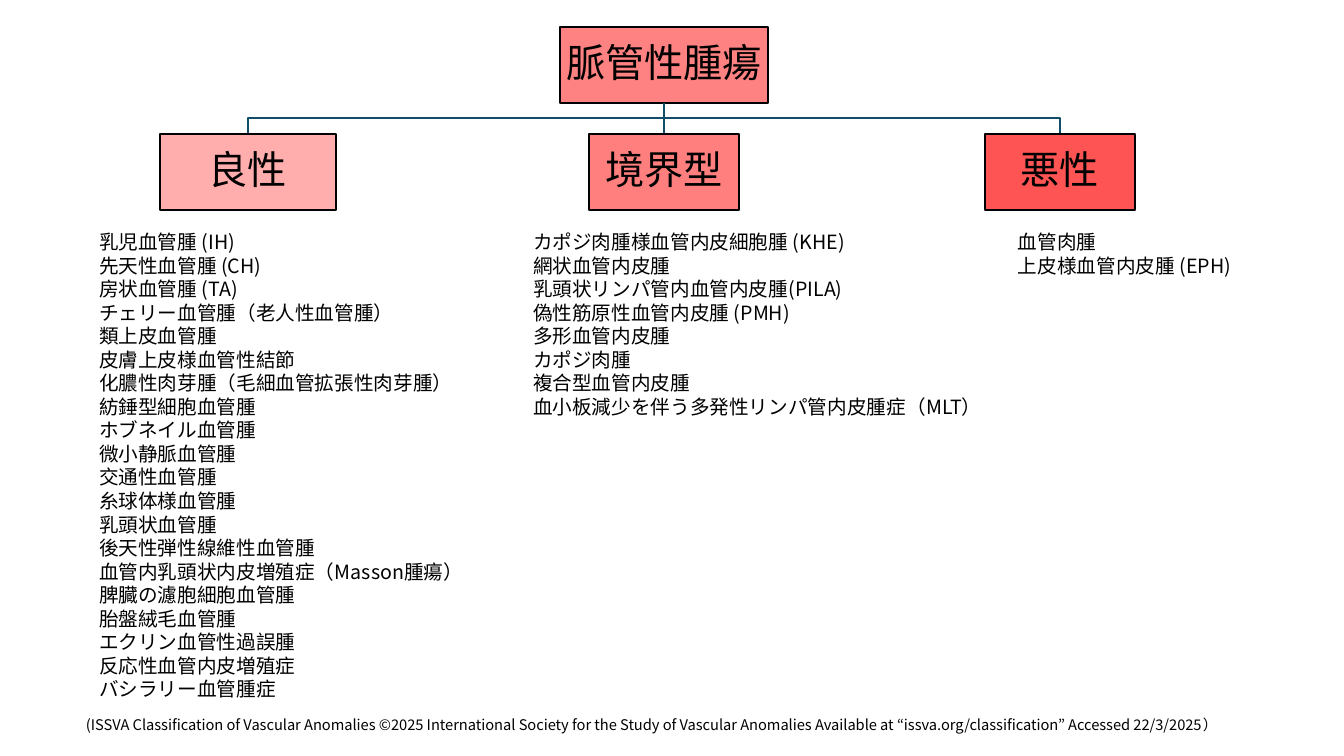
from dataclasses import dataclass
from lxml import etree
from pptx import Presentation
from pptx.dml.color import RGBColor
from pptx.enum.shapes import MSO_CONNECTOR, MSO_SHAPE
from pptx.enum.text import MSO_ANCHOR, MSO_AUTO_SIZE, PP_ALIGN
from pptx.oxml.ns import qn
from pptx.util import Pt

STRAIGHT = MSO_CONNECTOR.STRAIGHT
RECTANGLE = MSO_SHAPE.RECTANGLE
TOP, MIDDLE = MSO_ANCHOR.TOP, MSO_ANCHOR.MIDDLE
LEFT, CENTER = PP_ALIGN.LEFT, PP_ALIGN.CENTER
NO_FIT = MSO_AUTO_SIZE.NONE

ROOT = {"label": "脈管性腫瘍", "left": 560, "width": 208, "opacity": 49}
BRANCHES = [
    {"label": "良性", "left": 160, "width": 176, "opacity": 32,
     "list_left": 89, "list_width": 576, "slot": 1,
     "tumours": [
         "乳児血管腫 (IH)",
         "先天性血管腫 (CH)",
         "房状血管腫 (TA)",
         "チェリー血管腫（老人性血管腫）",
         "類上皮血管腫",
         "皮膚上皮様血管性結節",
         "化膿性肉芽腫（毛細血管拡張性肉芽腫）",
         "紡錘型細胞血管腫",
         "ホブネイル血管腫",
         "微小静脈血管腫",
         "交通性血管腫",
         "糸球体様血管腫",
         "乳頭状血管腫",
         "後天性弾性線維性血管腫",
         "血管内乳頭状内皮増殖症（Masson腫瘍）",
         "脾臓の濾胞細胞血管腫",
         "胎盤絨毛血管腫",
         "エクリン血管性過誤腫",
         "反応性血管内皮増殖症",
         "バシラリー血管腫症",
     ]},
    {"label": "境界型", "left": 589, "width": 150, "opacity": 50,
     "list_left": 523, "list_width": 485, "slot": 2,
     "tumours": [
         "カポジ肉腫様血管内皮細胞腫 (KHE)",
         "網状血管内皮腫",
         "乳頭状リンパ管内血管内皮腫(PILA)",
         "偽性筋原性血管内皮腫 (PMH)",
         "多形血管内皮腫",
         "カポジ肉腫",
         "複合型血管内皮腫",
         "血小板減少を伴う多発性リンパ管内皮腫症（MLT）",
     ]},
    {"label": "悪性", "left": 985, "width": 150, "opacity": 67,
     "list_left": 1008, "list_width": 247, "slot": 3,
     "tumours": ["血管肉腫", "上皮様血管内皮腫 (EPH)"]},
]
CITATION = ("(ISSVA Classification of Vascular Anomalies ©2025 International Society "
            "for the Study of Vascular Anomalies Available at "
            "“issva.org/classification” Accessed 22/3/2025）")
CITATION_SLOT = 4


@dataclass(frozen=True)
class Theme:
    font: str = "Noto Sans CJK JP"
    ink: RGBColor = RGBColor(0, 0, 0)
    box: RGBColor = RGBColor(0xFF, 0, 0)
    branch: RGBColor = RGBColor(0x11, 0x4D, 0x68)
    line: float = 1.5
    heading: float = 28
    entry: float = 14
    source: float = 10.5


THEME = Theme()
PX = 914400 / 100.8
SLIDE_WIDTH, SLIDE_HEIGHT = 1344, 756
ROOT_TOP, BRANCH_TOP, BOX_HEIGHT = 27, 134, 76
LIST_TOP, INSET, LINE_PITCH = 225, 5, 1.2
HEADING_FRAME = {"word_wrap": False, "vertical_anchor": MIDDLE, "auto_size": NO_FIT,
                 "margin_left": 2, "margin_right": 2, "margin_top": 2, "margin_bottom": 2}
LIST_FRAME = {"word_wrap": True, "vertical_anchor": TOP, "auto_size": NO_FIT,
              "margin_left": 10, "margin_right": 10,
              "margin_top": INSET, "margin_bottom": INSET}


def emu(px):
    return round(px * PX)


def apply(target, values):
    for name, value in values.items():
        setattr(target, name, value)


def place(shape, left, top, width, height):
    apply(shape, {"left": emu(left), "top": emu(top),
                  "width": emu(width), "height": emu(height)})


def write(shape, lines, size, frame_format, paragraph_format):
    frame = shape.text_frame
    apply(frame, {name: emu(value) if name.startswith("margin") else value
                  for name, value in frame_format.items()})
    for index, line in enumerate(lines):
        paragraph = frame.add_paragraph() if index else frame.paragraphs[0]
        apply(paragraph, {"space_before": Pt(0), "space_after": Pt(0), **paragraph_format})
        properties = paragraph._p.get_or_add_pPr()
        properties.set("marL", "0")
        properties.set("indent", "0")
        etree.SubElement(properties, qn("a:buNone"))
        run = paragraph.add_run()
        run.text = line
        apply(run.font, {"name": THEME.font, "size": Pt(size), "bold": False})
        run.font.color.rgb = THEME.ink
        etree.SubElement(run.font._element, qn("a:ea"), typeface=THEME.font)


def draw_heading(shape, node, top):
    place(shape, node["left"], top, node["width"], BOX_HEIGHT)
    shape.fill.solid()
    shape.fill.fore_color.rgb = THEME.box
    tint = shape.fill._xPr.find(".//" + qn("a:srgbClr"))
    etree.SubElement(tint, qn("a:alpha"), val=str(node["opacity"] * 1000))
    shape.line.color.rgb = THEME.ink
    shape.line.width = Pt(THEME.line)
    write(shape, [node["label"]], THEME.heading, HEADING_FRAME,
          {"alignment": CENTER, "line_spacing": 0.9})


def write_list(shape, lines, size, left, top, width):
    height = len(lines) * size * LINE_PITCH * 1.4 + 2 * INSET
    place(shape, left, top, width, height)
    write(shape, lines, size, LIST_FRAME,
          {"alignment": LEFT, "line_spacing": Pt(size * LINE_PITCH)})


def middle(node):
    return node["left"] + node["width"] // 2


def draw_branch(shapes, node):
    start, end = middle(ROOT), middle(node)
    fork_top = ROOT_TOP + BOX_HEIGHT
    bend = (fork_top + BRANCH_TOP) // 2
    if start == end:
        link = shapes.add_connector(STRAIGHT, emu(start), emu(fork_top),
                                    emu(end), emu(BRANCH_TOP))
        etree.SubElement(link._element.spPr, qn("a:effectLst"))
    else:
        outline = shapes.build_freeform(start, fork_top, scale=PX)
        outline.add_line_segments([(start, bend), (end, bend), (end, BRANCH_TOP)],
                                  close=False)
        link = outline.convert_to_shape()
        link.fill.background()
        link.shadow.inherit = False
    link.line.color.rgb = THEME.branch
    link.line.width = Pt(THEME.line)


def main():
    deck = Presentation()
    apply(deck, {"slide_width": emu(SLIDE_WIDTH), "slide_height": emu(SLIDE_HEIGHT)})
    slide = deck.slides.add_slide(deck.slide_layouts.get_by_name("Comparison"))
    shapes = slide.shapes
    slots = {slot.placeholder_format.idx: slot for slot in slide.placeholders}

    draw_heading(shapes.title, ROOT, ROOT_TOP)
    for node in BRANCHES:
        draw_branch(shapes, node)
    for node in BRANCHES:
        heading = shapes.add_shape(RECTANGLE, 0, 0, 0, 0)
        heading.shadow.inherit = False
        draw_heading(heading, node, BRANCH_TOP)
        write_list(slots[node["slot"]], node["tumours"], THEME.entry,
                   node["list_left"], LIST_TOP, node["list_width"])
    write_list(slots[CITATION_SLOT], [CITATION], THEME.source, 76, 711, 1268)
    deck.save("out.pptx")


if __name__ == "__main__":
    main()
